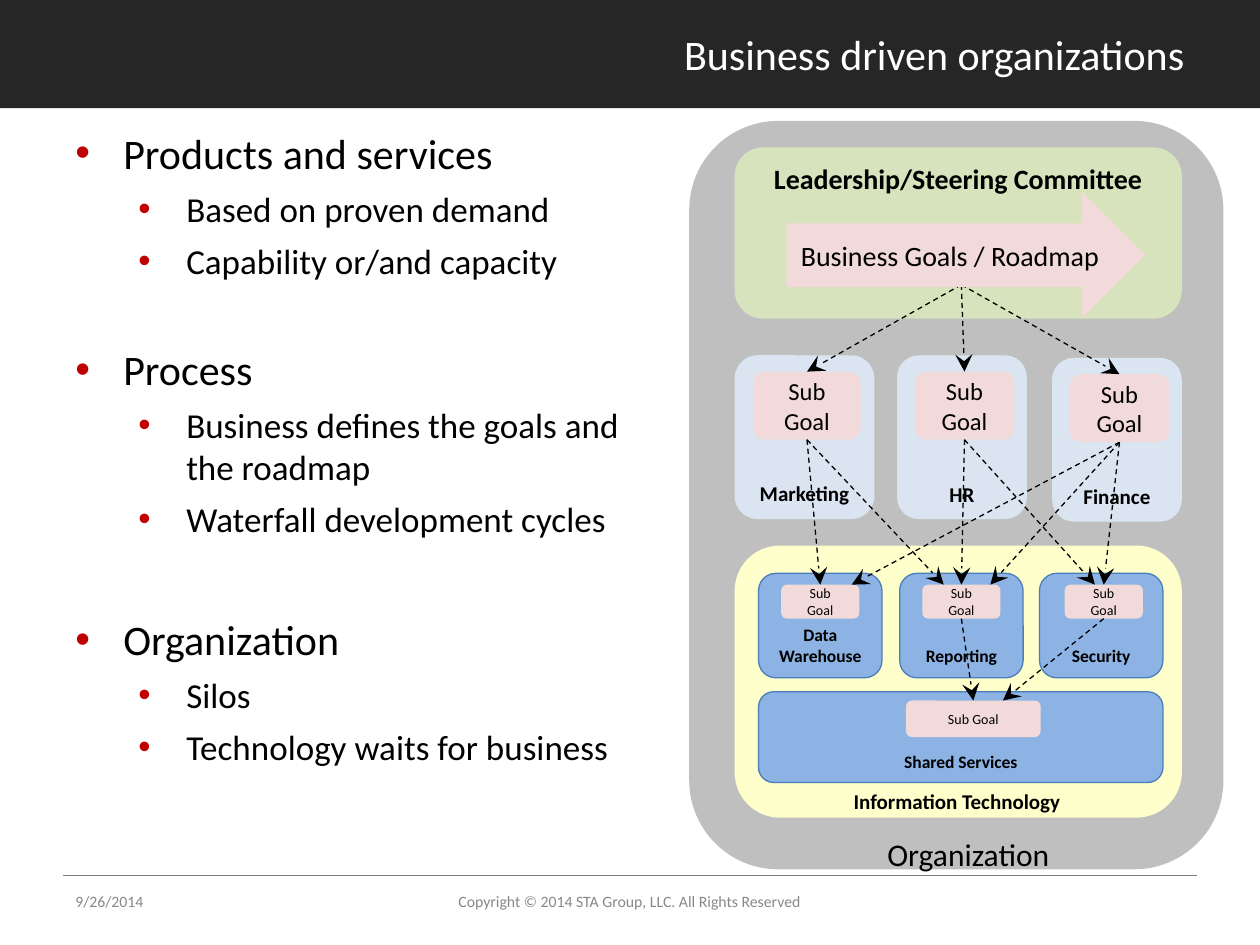
import pptx
import pptx.util
import pptx.dml.color
import pptx.enum.dml
import pptx.enum.shapes
import pptx.enum.text
import pptx.oxml
import pptx.oxml.ns
import lxml.etree

Inches = pptx.util.Inches
Pt = pptx.util.Pt
Shapes = pptx.enum.shapes.MSO_SHAPE
Align = pptx.enum.text.PP_ALIGN
Anchor = pptx.enum.text.MSO_ANCHOR
qn = pptx.oxml.ns.qn

COLORS = {
    "band": "262626", "rule": "7F7F7F", "footer": "888888", "white": "FFFFFF",
    "black": "000000", "bullet": "C00000", "organization": "BFBFBF",
    "leadership": "D6E3BC", "goal": "F2DADA", "department": "DAE5F1",
    "technology": "FFFFCC", "team": "8CB3E3", "team_line": "4A7DBB",
}
TOP, BOTTOM = 0, 2


def color(name):
    return pptx.dml.color.RGBColor.from_string(COLORS[name])


class SlideBuilder:
    font = "Calibri"

    def __init__(self, slide):
        self.slide = slide

    def add_text(self, paragraph, text, size, ink="black", bold=False):
        run = paragraph.add_run()
        run.text = text
        run.font.name = self.font
        run.font.size = Pt(size)
        run.font.bold = bold
        run.font.color.rgb = color(ink)

    def caption(self, shape, text, size, ink="black", bold=False,
                align=Align.CENTER, anchor=Anchor.MIDDLE):
        frame = shape.text_frame
        frame.word_wrap = True
        frame.vertical_anchor = anchor
        frame.paragraphs[0].alignment = align
        self.add_text(frame.paragraphs[0], text, size, ink, bold)

    def title(self, text, left, top, width, height):
        title = self.slide.shapes.title
        title.left, title.top = Inches(left), Inches(top)
        title.width, title.height = Inches(width), Inches(height)
        self.caption(title, text, 24, "white", align=Align.RIGHT)

    def shape(self, kind, box, fill, outline=None):
        shape = self.slide.shapes.add_shape(kind, *map(Inches, box))
        shape.shadow.inherit = False
        shape.fill.solid()
        shape.fill.fore_color.rgb = color(fill)
        if outline:
            shape.line.color.rgb = color(outline)
            shape.line.width = Pt(0.75)
        else:
            shape.line.fill.background()
        return shape

    def panel(self, box, fill, outline=None):
        return self.shape(Shapes.ROUNDED_RECTANGLE, box, fill, outline)

    def unit(self, name, box, goal_box, fill, name_size, goal_size, outline=None):
        self.caption(self.panel(box, fill, outline), name, name_size,
                     bold=True, anchor=Anchor.BOTTOM)
        goal = self.panel(goal_box, "goal")
        self.caption(goal, "Sub Goal", goal_size)
        return goal

    def text_box(self, box):
        text_box = self.slide.shapes.add_textbox(*map(Inches, box))
        text_box.text_frame.word_wrap = True
        return text_box

    def label(self, text, box, size, **style):
        self.caption(self.text_box(box), text, size, **style)

    def bullets(self, box, sections):
        frame = self.text_box(box).text_frame
        paragraph = frame.paragraphs[0]
        for heading, gap, items in sections:
            if gap:
                paragraph = frame.add_paragraph()
            self.bullet(paragraph, heading, 0, 24, gap)
            for item in items:
                self.bullet(frame.add_paragraph(), item, 1, 20, 5.6)

    def bullet(self, paragraph, text, level, size, gap):
        paragraph.level = level
        properties = paragraph._p.get_or_add_pPr()
        properties.set("marL", str(Inches(0.38 + 0.5 * level)))
        properties.set("indent", str(Inches(-0.38)))
        tint = lxml.etree.SubElement(properties, qn("a:buClr"))
        lxml.etree.SubElement(tint, qn("a:srgbClr"), val=COLORS["bullet"])
        lxml.etree.SubElement(properties, qn("a:buFont"), typeface="Arial")
        lxml.etree.SubElement(properties, qn("a:buChar"), char="•")
        paragraph.space_before = Pt(gap)
        self.add_text(paragraph, text, size)

    def line(self, start, end, ink):
        connector = self.slide.shapes.add_connector(
            pptx.enum.shapes.MSO_CONNECTOR.STRAIGHT, *map(Inches, start + end))
        connector.line.color.rgb = color(ink)
        connector.line.width = Pt(0.75)
        lxml.etree.SubElement(connector._element.spPr, qn("a:effectLst"))
        return connector

    def link(self, start, end, source=None, target=None):
        connector = self.line(start, end, "black")
        connector.line.dash_style = pptx.enum.dml.MSO_LINE.DASH
        outline = connector._element.spPr.find(qn("a:ln"))
        lxml.etree.SubElement(outline, qn("a:tailEnd"),
                              type="stealth", w="lg", len="lg")
        if source is not None:
            connector.begin_connect(source, BOTTOM)
        if target is not None:
            connector.end_connect(target, TOP)

    def link_goals(self, source, target, end_x=None):
        start = ((source.left + source.width / 2) / Inches(1),
                 (source.top + source.height) / Inches(1))
        middle = (target.left + target.width / 2) / Inches(1)
        end = (end_x or middle, target.top / Inches(1))
        self.link(start, end, source, None if end_x else target)


def main():
    presentation = pptx.Presentation()
    presentation.slide_width, presentation.slide_height = Inches(10), Inches(7.5)
    slide = presentation.slides.add_slide(presentation.slide_layouts[5])
    builder = SlideBuilder(slide)

    band = builder.shape(Shapes.RECTANGLE, (0, 0, 10, 0.86), "band")
    slide.shapes._spTree.insert(2, band._element)
    builder.title("Business driven organizations", 1.97, 0, 7.53, 0.86)
    builder.line((0.5, 6.95), (9.5, 6.95), "rule")
    builder.label("9/26/2014", (0.5, 6.95, 2.33, 0.4), 9, ink="footer", align=Align.LEFT)
    builder.label("Copyright © 2014 STA Group, LLC. All Rights Reserved",
                  (2.83, 6.95, 4.33, 0.4), 9, ink="footer")

    builder.bullets((0.5, 0.96, 4.72, 5.62), [
        ("Products and services", 0,
         ["Based on proven demand", "Capability or/and capacity"]),
        ("Process", 35.7,
         ["Business defines the goals and the roadmap", "Waterfall development cycles"]),
        ("Organization", 42.1, ["Silos", "Technology waits for business"]),
    ])

    builder.panel((5.47, 0.96, 4.24, 5.94), "organization")
    leadership = builder.panel((5.83, 1.17, 3.55, 1.36), "leadership")
    builder.caption(leadership, "Leadership/Steering Committee", 16, bold=True,
                    anchor=Anchor.TOP)
    builder.panel((5.83, 4.33, 3.55, 2.16), "technology")

    departments = [
        builder.unit(name, (left, top, width, 1.3),
                     (goal_left, top + 0.13, goal_width, 0.54), "department", 12, 14)
        for name, left, top, width, goal_left, goal_width in [
            ("Marketing", 5.83, 2.82, 1.11, 5.98, 0.85),
            ("HR", 7.12, 2.82, 1.03, 7.26, 0.79),
            ("Finance", 8.35, 2.84, 1.03, 8.49, 0.79),
        ]
    ]
    teams = [
        builder.unit(name, (left, 4.55, 0.98, 0.83), (goal_left, 4.64, 0.62, 0.27),
                     "team", 10, 8, "team_line")
        for name, left, goal_left in [
            ("Data Warehouse", 6.02, 6.2),
            ("Reporting", 7.14, 7.32),
            ("Security", 8.25, 8.45),
        ]
    ]
    shared = builder.unit("Shared Services", (6.02, 5.49, 3.21, 0.72),
                          (7.19, 5.56, 1.07, 0.29), "team", 10, 8, "team_line")
    builder.label("Information Technology", (6.55, 6.21, 2.09, 0.3), 12,
                  bold=True, anchor=Anchor.TOP)
    builder.label("Organization", (6.64, 6.58, 2.09, 0.4), 18, anchor=Anchor.TOP)

    for department in departments:
        builder.link((7.63, 2.26), (7.65, 2.95), target=department)
    marketing, hr, finance = departments
    warehouse, reporting, security = teams
    for source, target, end_x in [
        (marketing, warehouse, None), (marketing, reporting, 7.49),
        (hr, reporting, None), (hr, security, 8.69),
        (finance, security, None), (finance, reporting, 7.86),
        (finance, warehouse, 6.76),
        (reporting, shared, None), (security, shared, 7.96),
    ]:
        builder.link_goals(source, target, end_x)

    roadmap = builder.shape(Shapes.RIGHT_ARROW, (6.24, 1.52, 2.85, 1.01), "goal")
    builder.caption(roadmap, "Business Goals / Roadmap", 16)
    presentation.save("out.pptx")


if __name__ == "__main__":
    main()
